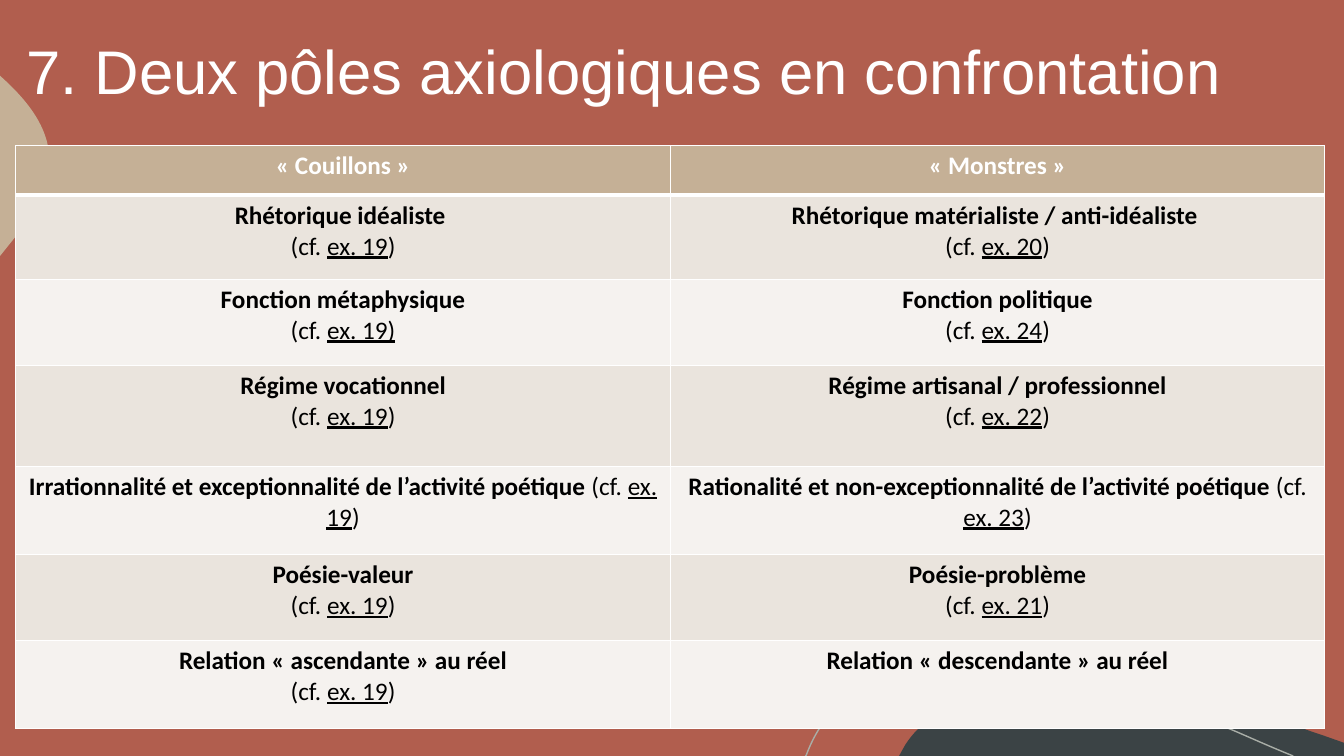
from dataclasses import dataclass

from lxml import etree
from pptx import Presentation
from pptx.dml.color import RGBColor
from pptx.enum import text
from pptx.oxml import ns
from pptx.util import Pt


@dataclass(frozen=True)
class Theme:
    background: str = "B15E4E"
    sand: str = "C5B096"
    slate: str = "3B4345"
    outline: str = "A9AEA7"
    white: str = "FFFFFF"
    black: str = "000000"
    bands: tuple = ("F5F2EF", "EAE4DD")
    title_font: str = "Arial"
    table_font: str = "Calibri"
    title_size: int = 44
    table_size: int = 18


THEME = Theme()
rgb = RGBColor.from_string


def bend_segments(shape, segments):
    """Turn each run of three straight steps that belongs to one segment into a cubic curve."""
    steps = iter(list(shape.element.iter(ns.qn("a:lnTo"))))
    for segment in segments:
        first, *others = [next(steps) for _ in segment]
        if others:
            first.tag = ns.qn("a:cubicBezTo")
        for step in others:
            first.append(step[0])
            step.getparent().remove(step)


def add_border(cell, side, width):
    properties = cell._tc.get_or_add_tcPr()
    line = etree.SubElement(properties, ns.qn(f"a:ln{side}"), w=str(Pt(width)))
    fill = etree.SubElement(line, ns.qn("a:solidFill"))
    etree.SubElement(fill, ns.qn("a:srgbClr"), val=THEME.white)


presentation = Presentation()
presentation.slide_width, presentation.slide_height = Pt(960), Pt(540)
slide = presentation.slides.add_slide(presentation.slide_layouts[5])
slide.background.fill.solid()
slide.background.fill.fore_color.rgb = rgb(THEME.background)

# Title
title = slide.shapes.title
title.left, title.top, title.width, title.height = Pt(11.5), Pt(12.2), Pt(935), Pt(82.8)
title.text_frame.text = "7. Deux pôles axiologiques en confrontation"
title.text_frame.vertical_anchor = text.MSO_ANCHOR.MIDDLE
title_paragraph = title.text_frame.paragraphs[0]
title_paragraph.alignment = text.PP_ALIGN.LEFT
title_paragraph.line_spacing = 0.9
title_paragraph.font.name = THEME.title_font
title_paragraph.font.size = Pt(THEME.title_size)
title_paragraph.font.color.rgb = rgb(THEME.white)

# Decorative outlines, behind the title: fill, line, start, segments.
# A segment has one point if straight, three if curved.
decorations = [
    (THEME.slate, None, (758.9, 491.8), [
        [(812.2, 491.8), (866.9, 496.8), (916.6, 515.5)],
        [(925.9, 518.4), (934.6, 522), (943.9, 524.9)],
        [(960, 530.6)], [(960, 540)], [(642.2, 540)], [(646.6, 532.1)],
        [(649.4, 527.8), (652.3, 524.2), (655.9, 520.6)],
        [(676.1, 499), (707, 492.5), (736.6, 491.8)],
        [(743.8, 491.8), (751.7, 491.8), (758.9, 491.8)],
    ]),
    (THEME.sand, None, (0, 54), [
        [(0.7, 54.7)],
        [(21.6, 73.4), (38.9, 95.8), (34.6, 122.4)],
        [(33.1, 134.6), (26.6, 146.2), (19.4, 157)],
        [(17.3, 161.3), (12.2, 167.8), (5.8, 175.7)],
        [(0, 182.9)],
    ]),
    (None, THEME.outline, (575.3, 540), [
        [(576, 539.3)],
        [(580.3, 527.8), (586.1, 517.7), (593.3, 509.8)],
        [(612, 490.3), (640.1, 484.6), (666.7, 483.8)],
        [(687.6, 483.8)],
        [(735.8, 483.8), (792, 492.5), (831.6, 505.4)],
        [(870.5, 514.8), (882.7, 523.4), (923.8, 540)],
    ]),
]
for fill_color, line_color, (start_x, start_y), segments in decorations:
    builder = slide.shapes.build_freeform(Pt(start_x), Pt(start_y))
    points = [(Pt(x), Pt(y)) for segment in segments for x, y in segment]
    builder.add_line_segments(points, close=fill_color is not None)
    decoration = builder.convert_to_shape()
    bend_segments(decoration, segments)
    decoration.shadow.inherit = False
    for part, color in ((decoration.fill, fill_color), (decoration.line.fill, line_color)):
        if color:
            part.solid()
            part.fore_color.rgb = rgb(color)
        else:
            part.background()
    if line_color:
        decoration.line.width = Pt(1)
    title.element.addprevious(decoration.element)

# Table: "|" separates the bold, plain, underlined and plain runs of a cell
run_formats = [
    {"bold": True, "underline": False},
    {"bold": False, "underline": False},
    {"bold": False, "underline": True},
    {"bold": False, "underline": False},
]
rows = [
    (35.5, "« Couillons »", "« Monstres »"),
    (60, "Rhétorique idéaliste |\n(cf. |ex. 19|)", "Rhétorique matérialiste / anti-idéaliste |\n(cf. |ex. 20|)"),
    (61.4, "Fonction métaphysique|\n(cf. |ex. 19)", "Fonction politique|\n(cf. |ex. 24|)"),
    (72.2, "Régime vocationnel|\n(cf. |ex. 19|)", "Régime artisanal / professionnel|\n(cf. |ex. 22|)"),
    (63, "Irrationnalité et exceptionnalité de l’activité poétique| (cf. |ex. 19|)",
     "Rationalité et non-exceptionnalité de l’activité poétique| (cf. |ex. 23|)"),
    (61.4, "Poésie-valeur|\n(cf. |ex. 19|)", "Poésie-problème|\n(cf. |ex. 21|)"),
    (62.9, "Relation « ascendante » au réel|\n(cf. |ex. 19|)", "Relation « descendante » au réel"),
]
table_height = sum(height for height, *_ in rows)
table = slide.shapes.add_table(len(rows), 2, Pt(11.3), Pt(104), Pt(935), Pt(table_height)).table
for row_index, (height, *contents) in enumerate(rows):
    table.rows[row_index].height = Pt(height)
    is_header = row_index == 0
    for column_index, content in enumerate(contents):
        cell = table.cell(row_index, column_index)
        if is_header:
            for side, width in {"L": 1, "R": 1, "T": 1, "B": 3}.items():
                add_border(cell, side, width)
        cell.fill.solid()
        cell.fill.fore_color.rgb = rgb(THEME.sand if is_header else THEME.bands[row_index % 2])
        paragraph = cell.text_frame.paragraphs[0]
        for piece, run_format in zip(content.split("|"), run_formats):
            if piece.startswith("\n"):
                paragraph = cell.text_frame.add_paragraph()
            run = paragraph.add_run()
            run.text = piece.lstrip("\n")
            font_format = {"name": THEME.table_font, "size": Pt(THEME.table_size), **run_format}
            for attribute, value in font_format.items():
                setattr(run.font, attribute, value)
            run.font.color.rgb = rgb(THEME.white if is_header else THEME.black)
        for paragraph in cell.text_frame.paragraphs:
            paragraph.alignment = text.PP_ALIGN.CENTER

presentation.save("out.pptx")
